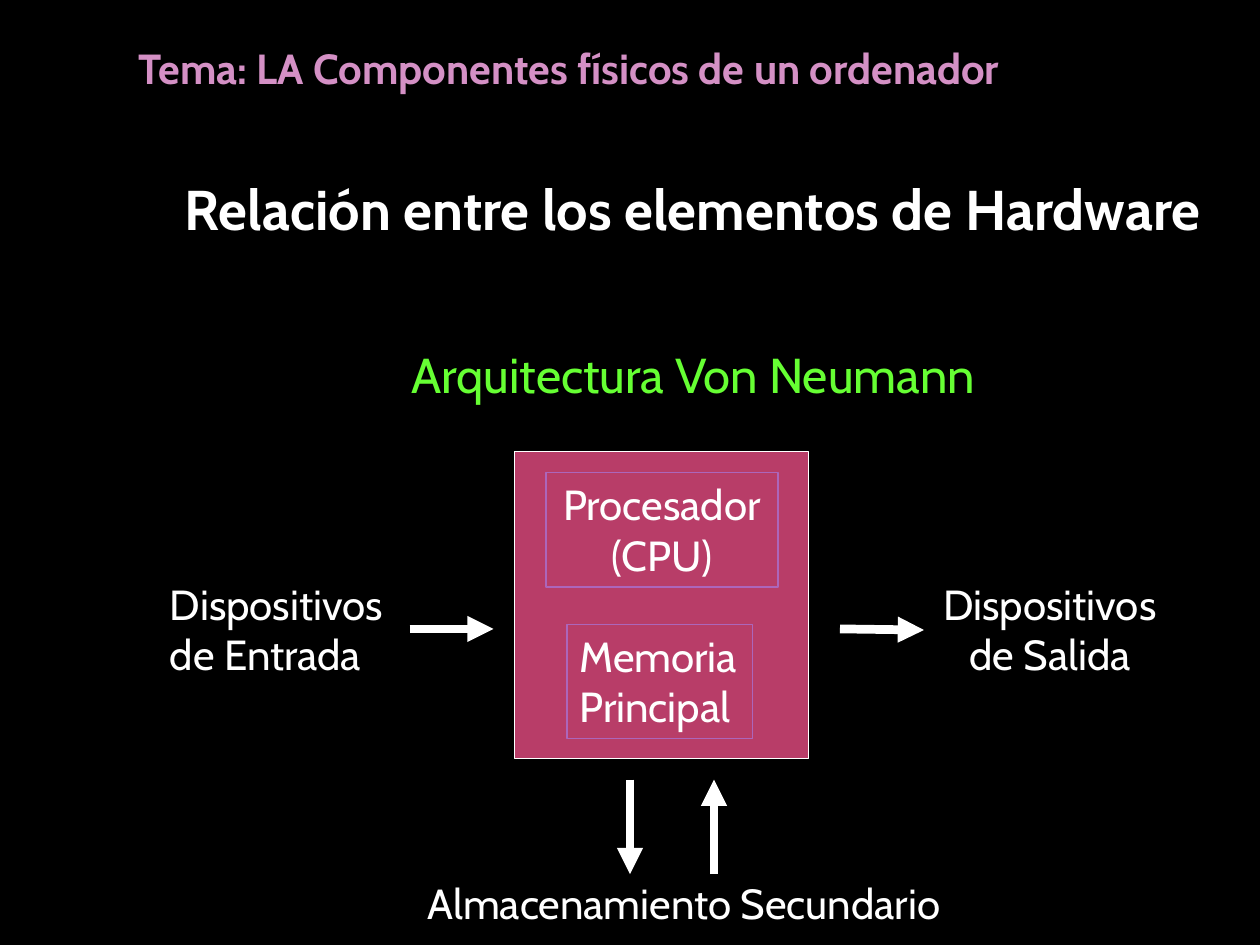
from lxml import etree
from pptx import Presentation
from pptx.dml.color import RGBColor
from pptx.enum.shapes import MSO_CONNECTOR, MSO_SHAPE
from pptx.enum.text import MSO_ANCHOR, MSO_AUTO_SIZE, PP_ALIGN
from pptx.oxml.ns import qn
from pptx.util import Inches, Pt

LEFT, CENTER = PP_ALIGN.LEFT, PP_ALIGN.CENTER
TOP, FIT = MSO_ANCHOR.TOP, MSO_AUTO_SIZE.SHAPE_TO_FIT_TEXT
RECT, STRAIGHT = MSO_SHAPE.RECTANGLE, MSO_CONNECTOR.STRAIGHT
FONT = "Cabin"
COLORS = {name: RGBColor.from_string(value) for name, value in {
    "background": "000000", "topic": "D490C5", "white": "FFFFFF",
    "architecture": "66FF33", "core": "B83D68", "unit": "AC66BB",
}.items()}

prs = Presentation()
prs.slide_width, prs.slide_height = Inches(10), Inches(7.5)
CELL = prs.slide_width / 120  # grid of 120 columns by 90 rows
slide = prs.slides.add_slide(prs.slide_layouts[6])
slide.background.fill.solid()
slide.background.fill.fore_color.rgb = COLORS["background"]


def grid(*cells):
    return [round(cell * CELL) for cell in cells]


def write(shape, lines, size=24, color="white", align=LEFT, bold=False, wrap=False):
    frame = shape.text_frame
    frame.word_wrap, frame.auto_size, frame.vertical_anchor = wrap, FIT, TOP
    for number, line in enumerate(lines):
        paragraph = frame.add_paragraph() if number else frame.paragraphs[0]
        paragraph.alignment = align
        run = paragraph.add_run()
        run.text = line
        run.font.name, run.font.size, run.font.bold = FONT, Pt(size), bold
        run.font.color.rgb = COLORS[color]


# Headings: place, text, size, colour, alignment, bold, wrap
for place, heading, *style in [
    ((12, 3.5, 97.9, 6), "Tema: LA Componentes físicos de un ordenador",
     24, "topic", LEFT, True, False),
    ((12, 16, 108, 14), "Relación entre los elementos de Hardware",
     32, "white", CENTER, True, True),
    ((12, 32.2, 108, 6.9), "Arquitectura Von Neumann",
     28, "architecture", CENTER, False, True),
]:
    write(slide.shapes.add_textbox(*grid(*place)), [heading], *style)

# Central block with processor and memory
for place, fill, border, lines, align in [
    ((49, 43, 28, 29.25), "core", "white", [], CENTER),
    ((52, 45, 22.1, 10.9), None, "unit", ["Procesador", "(CPU)"], CENTER),
    ((54, 59.45, 17.7, 10.9), None, "unit", ["Memoria", "Principal"], LEFT),
]:
    block = slide.shapes.add_shape(RECT, *grid(*place))
    block.shadow.inherit = False
    if fill:
        block.fill.solid()
        block.fill.fore_color.rgb = COLORS[fill]
    else:
        block.fill.background()
    block.line.color.rgb = COLORS[border]
    block.line.width = Pt(0.75)
    if lines:
        write(block, lines, align=align)

# Devices and storage around the block
for place, lines, align, wrap in [
    ((15, 54.5, 23.2, 10.9), ["Dispositivos", "de Entrada"], LEFT, False),
    ((88, 54.5, 24, 10.9), ["Dispositivos de Salida"], CENTER, True),
    ((39, 83, 52.3, 6), ["Almacenamiento Secundario"], CENTER, False),
]:
    write(slide.shapes.add_textbox(*grid(*place)), lines, align=align, wrap=wrap)

# Data flow: input, output, to storage, from storage
for ends in [(39, 59.9, 47, 59.9), (80, 59.9, 88, 60),
             (60, 74.25, 60, 83.25), (68, 83.25, 68, 74.25)]:
    flow = slide.shapes.add_connector(STRAIGHT, *grid(*ends))
    flow.line.color.rgb = COLORS["white"]
    flow.line.width = Pt(5)
    etree.SubElement(flow.line._get_or_add_ln(), qn("a:tailEnd"), type="triangle")
    etree.SubElement(flow._element.spPr, qn("a:effectLst"))

prs.save("out.pptx")
